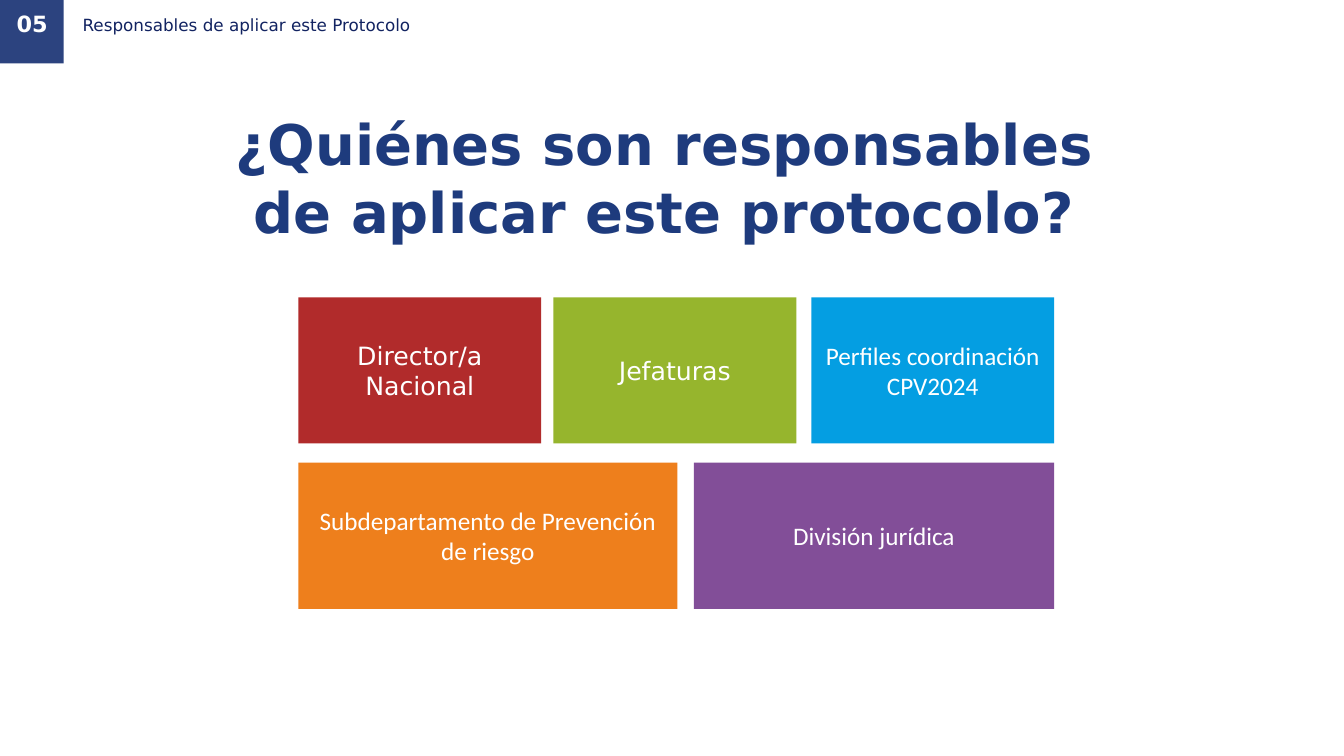
from dataclasses import dataclass

from pptx import Presentation
from pptx.dml.color import RGBColor
from pptx.enum.shapes import MSO_SHAPE
from pptx.enum.text import MSO_ANCHOR, MSO_AUTO_SIZE, PP_ALIGN
from pptx.shapes.autoshape import Shape
from pptx.slide import Slide
from pptx.util import Pt

COLORS = {
    "white": "FFFFFF", "tab": "2C437F", "head": "122361", "title": "1E3B7D",
    "red": "B12B2B", "green": "96B52D", "blue": "049EE2",
    "orange": "EE7F1C", "purple": "824E98",
}
SANS, BODY = "DejaVu Sans", "Calibri"
TOP, HIGH, PITCH = 212.4, 104.4, 118.1


@dataclass
class Box:
    text: str
    color: str
    row: int
    left: float
    width: float
    font: str = BODY


BOXES = [
    Box("Director/a Nacional", "red", 0, 213.1, 173.5, SANS),
    Box("Jefaturas", "green", 0, 395.3, 173.5, SANS),
    Box("Perfiles coordinación CPV2024", "blue", 0, 579.5, 173.5),
    Box("Subdepartamento de Prevención de riesgo", "orange", 1, 213.1, 270.7),
    Box("División jurídica", "purple", 1, 495.6, 257.4),
]


def write(shape: Shape, text: str, *, size: float = 18, font: str = SANS,
          color: str = "white", bold: bool = False, space: float = 1,
          align: PP_ALIGN = PP_ALIGN.CENTER,
          anchor: MSO_ANCHOR = MSO_ANCHOR.MIDDLE, inset: float = 7.2) -> None:
    frame = shape.text_frame
    frame.auto_size = MSO_AUTO_SIZE.NONE
    frame.word_wrap = True
    frame.vertical_anchor = anchor
    frame.margin_left, frame.margin_right = Pt(inset), Pt(7.2)
    frame.margin_top = frame.margin_bottom = Pt(3.6)
    frame.text = text
    para = frame.paragraphs[0]
    para.alignment = align
    para.line_spacing = space
    para.font.name = font
    para.font.size = Pt(size)
    para.font.bold = bold
    para.font.color.rgb = RGBColor.from_string(COLORS[color])


def block(slide: Slide, left: float, top: float, width: float, high: float,
          color: str) -> Shape:
    shape = slide.shapes.add_shape(
        MSO_SHAPE.RECTANGLE, Pt(left), Pt(top), Pt(width), Pt(high))
    shape.shadow.inherit = False
    shape.fill.solid()
    shape.fill.fore_color.rgb = RGBColor.from_string(COLORS[color])
    shape.line.fill.background()
    return shape


def main() -> None:
    deck = Presentation()
    deck.slide_width, deck.slide_height = Pt(960), Pt(540)
    slide = deck.slides.add_slide(deck.slide_layouts[5])

    # Header: section number and name
    block(slide, 0, 0, 45.5, 45.4, "tab")
    name = slide.shapes.add_textbox(Pt(59), Pt(-0.7), Pt(857.5), Pt(38.9))
    write(name, "Responsables de aplicar este Protocolo", size=12,
          color="head", space=0.9, align=PP_ALIGN.LEFT, inset=0)
    number = slide.shapes.add_textbox(Pt(0), Pt(4.3), Pt(46), Pt(27.4))
    write(number, "05", size=16, bold=True, space=0.9)

    # Title
    title = slide.shapes.title
    title.left, title.top = Pt(148.3), Pt(74.9)
    title.width, title.height = Pt(651.6), Pt(132.5)
    write(title, "¿Quiénes son responsables de aplicar este protocolo?",
          size=40, color="title", bold=True, anchor=MSO_ANCHOR.TOP)

    # Responsible parties in two rows
    for box in BOXES:
        shape = block(slide, box.left, TOP + box.row * PITCH, box.width,
                      HIGH, box.color)
        write(shape, box.text, font=box.font)

    deck.save("out.pptx")


if __name__ == "__main__":
    main()
